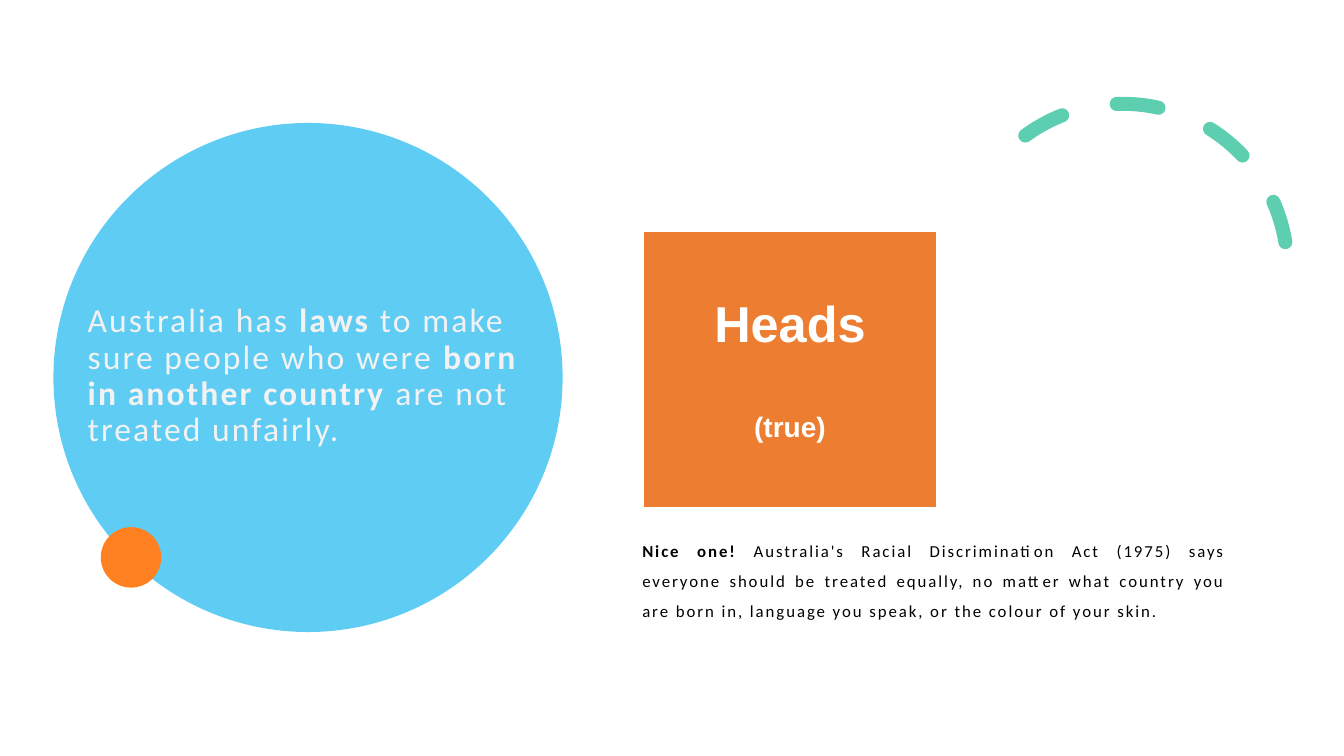
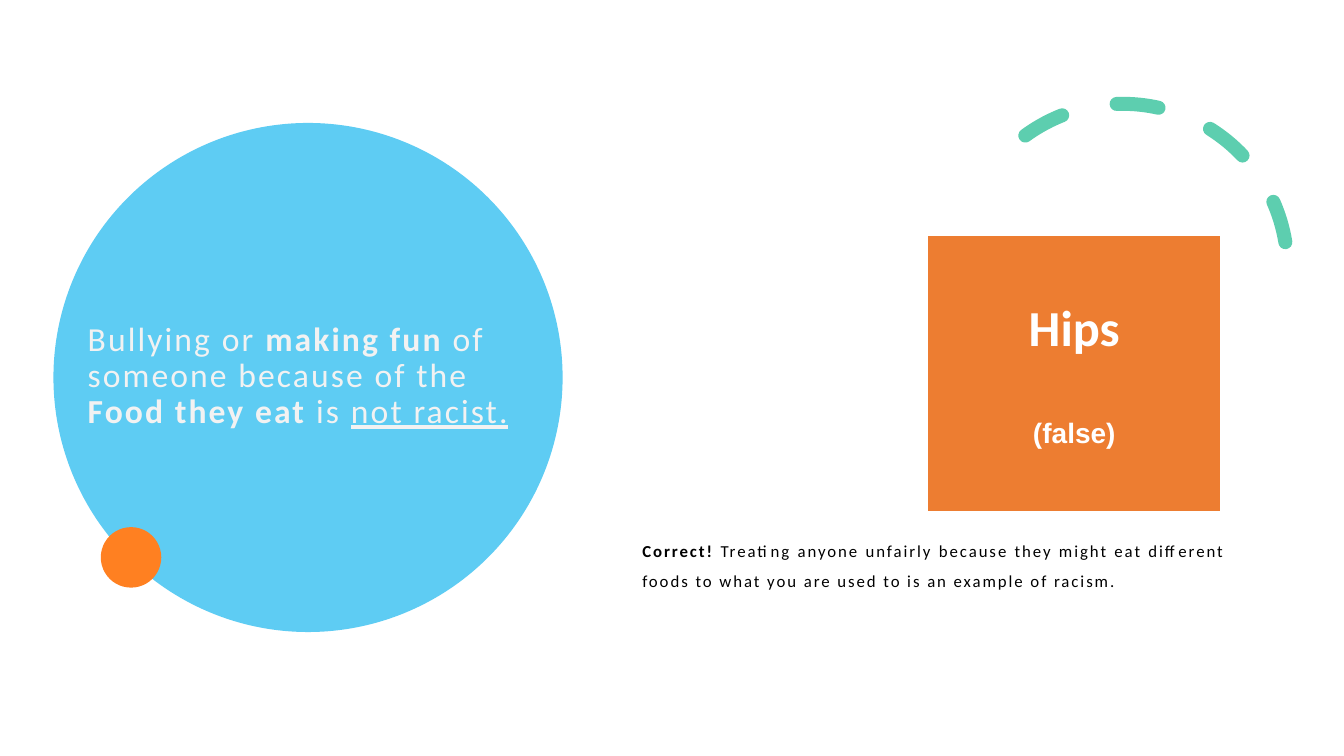
import pptx
import pptx.dml.color
import pptx.enum.dml
import pptx.enum.shapes
import pptx.enum.text
import pptx.util

Inches = pptx.util.Inches
Pt = pptx.util.Pt
Shape = pptx.enum.shapes.MSO_SHAPE
Align = pptx.enum.text.PP_ALIGN
Anchor = pptx.enum.text.MSO_ANCHOR

COLOURS = {
    "white": "FFFFFF",
    "statement": "F2F2F2",
    "black": "000000",
    "circle": "5ECCF3",
    "dot": "FF8021",
    "arc": "5DCEAF",
    "answer": "ED7D31",
}
BOLD = {"bold": True}
UNDERLINE = {"underline": True}


def colour(name):
    return pptx.dml.color.RGBColor.from_string(COLOURS[name])


def apply(target, values):
    for name, value in values.items():
        setattr(target, name, value)


class QuizDeck:
    """Holds the shared style and the current slide."""

    frame_format = {
        "margin_left": Inches(0.12), "margin_top": Inches(0.12),
        "margin_right": Inches(0.12), "margin_bottom": Inches(0.1),
        "word_wrap": True, "auto_size": pptx.enum.text.MSO_AUTO_SIZE.NONE,
    }
    statement_font = {"name": "Calibri", "size": Pt(24), "bold": False}
    note_font = {"name": "Calibri", "size": Pt(12), "bold": False}

    def __init__(self):
        self.deck = pptx.Presentation()
        self.deck.slide_width = Inches(13.33)
        self.deck.slide_height = Inches(7.5)
        self.page = None

    def add_page(self):
        """Start a slide with the circle, dot and dashed arc."""
        self.page = self.deck.slides.add_slide(self.deck.slide_layouts[5])
        self.disc(0.53, 1.22, 5.05, "circle")
        self.dashed_arc()
        self.disc(1, 5.23, 0.6, "dot")

    def disc(self, left, top, size, fill):
        disc = self.page.shapes.add_shape(
            Shape.OVAL, Inches(left), Inches(top), Inches(size), Inches(size))
        disc.shadow.inherit = False
        disc.fill.solid()
        disc.fill.fore_color.rgb = colour(fill)
        disc.line.fill.background()

    def dashed_arc(self):
        arc = self.page.shapes.add_shape(
            Shape.ARC, Inches(9.5), Inches(1.03), Inches(3.27), Inches(3.27))
        arc.shadow.inherit = False
        arc.rotation = 330.2
        arc.adjustments[0] = 158.17
        arc.adjustments[1] = 17.81
        arc.fill.background()
        arc.line.color.rgb = colour("arc")
        arc.line.width = Pt(10)
        arc.line.dash_style = pptx.enum.dml.MSO_LINE.DASH
        arc.line._get_or_add_ln().set("cap", "rnd")

    def add_spans(self, para, spans, font, tint, spacing=0):
        """Fill a paragraph with (text, changed font values) spans."""
        for text, changes in spans:
            span = para.add_run()
            span.text = text
            apply(span.font, {**font, **changes})
            span.font.color.rgb = colour(tint)
            if spacing:
                span._r.get_or_add_rPr().set("spc", str(round(spacing * 100)))

    def statement(self, spans):
        title = self.page.shapes.title
        # The title has to lie in front of the circle
        self.page.shapes._spTree.append(title._element)
        apply(title, {"left": Inches(0.75), "top": Inches(1.53),
                      "width": Inches(4.87), "height": Inches(4.39)})
        apply(title.text_frame,
              {**self.frame_format, "vertical_anchor": Anchor.MIDDLE})
        para = title.text_frame.paragraphs[0]
        apply(para, {"alignment": Align.LEFT, "line_spacing": 0.9})
        self.add_spans(para, spans, self.statement_font, "statement", 1.5)

    def answer(self, left, top, word, verdict, word_font):
        table = self.page.shapes.add_table(
            1, 1, Inches(left), Inches(top), Inches(2.91), Inches(2.74)).table
        cell = table.cell(0, 0)
        cell.vertical_anchor = Anchor.MIDDLE
        cell.fill.solid()
        cell.fill.fore_color.rgb = colour("answer")
        frame = cell.text_frame
        lines = [
            (frame.paragraphs[0], word, word_font, 36, 0),
            (frame.add_paragraph(), verdict, "Arial", 20, 42),
        ]
        for para, text, name, size, gap in lines:
            apply(para, {"alignment": Align.CENTER, "space_before": Pt(gap)})
            font = {"name": name, "size": Pt(size), "bold": True}
            self.add_spans(para, [(text, {})], font, "white")

    def note(self, spans):
        box = self.page.shapes.add_textbox(
            Inches(6), Inches(5.14), Inches(6.28), Inches(1.75))
        apply(box.text_frame, self.frame_format)
        para = box.text_frame.paragraphs[0]
        apply(para, {"alignment": Align.JUSTIFY, "line_spacing": 1.5,
                     "space_before": Pt(10)})
        para._p.get_or_add_pPr().set("marL", str(Inches(0.25)))
        self.add_spans(para, spans, self.note_font, "black", 1.4)


def main():
    quiz = QuizDeck()

    # Laws: true
    quiz.add_page()
    quiz.statement([
        ("Australia has ", {}), ("laws", BOLD),
        (" to make sure people who were ", {}),
        ("born in another country", BOLD),
        (" are not treated unfairly.", {}),
    ])
    quiz.answer(6.38, 2.3, "Heads", "(true)", "Arial")
    quiz.note([
        ("Nice one!", BOLD),
        (" Australia's Racial Discrimination Act (1975) says everyone should "
         "be treated equally, no matter what country you are born in, "
         "language you speak, or the colour of your skin.", {}),
    ])

    # Food: false
    quiz.add_page()
    quiz.statement([
        ("Bullying or ", {}), ("making fun", BOLD),
        (" of someone because of the ", {}), ("Food they eat", BOLD),
        (" is ", {}), ("not racist.", UNDERLINE),
    ])
    quiz.answer(9.2, 2.34, "Hips", "(false)", "Calibri")
    quiz.note([
        ("Correct!", BOLD),
        (" Treating anyone unfairly because they might eat different foods "
         "to what you are used to is an example of racism.", {}),
    ])

    quiz.deck.save("out.pptx")


if __name__ == "__main__":
    main()
